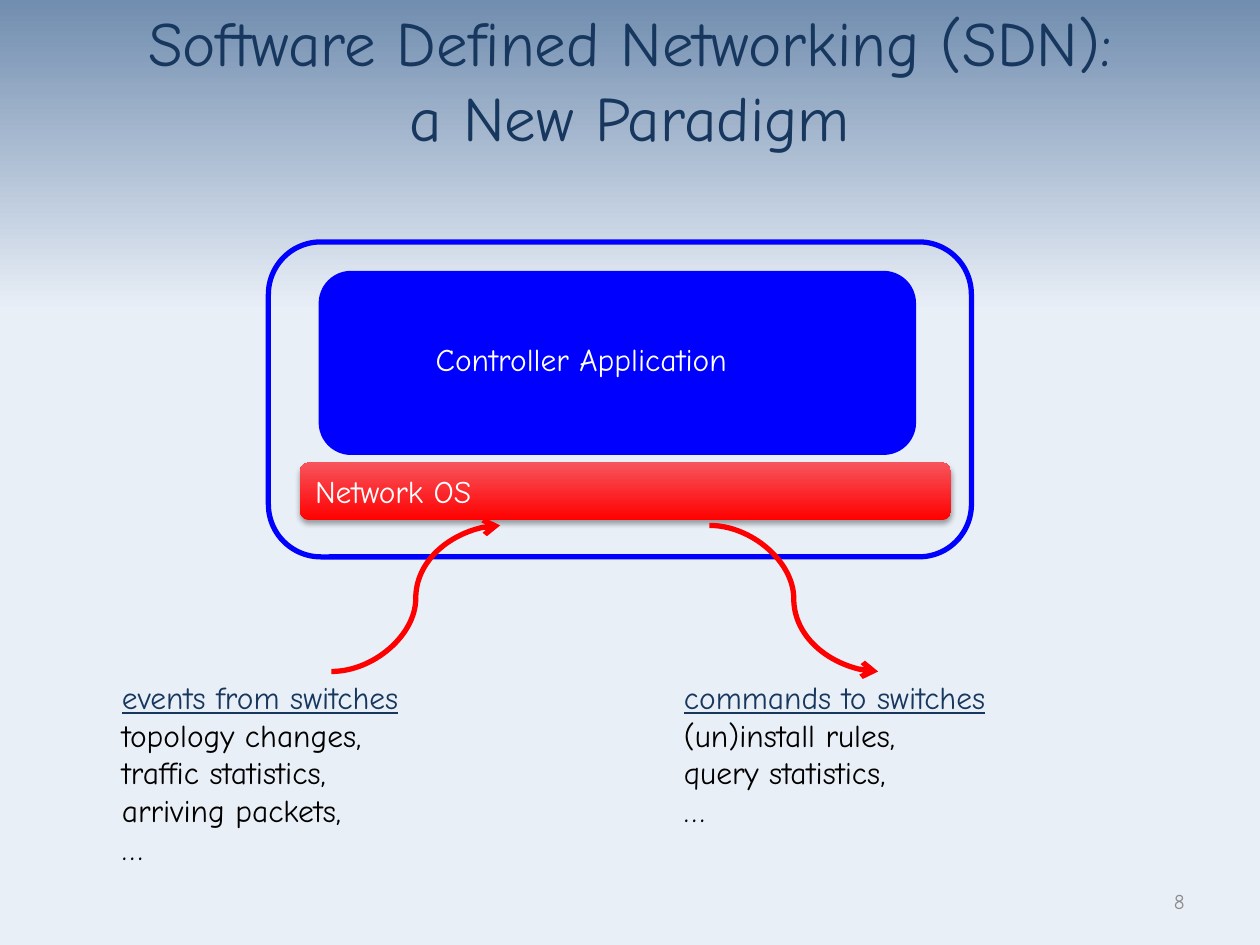
from lxml import etree
from pptx import Presentation
from pptx.dml.color import RGBColor
from pptx.enum.shapes import MSO_CONNECTOR as CONN, MSO_SHAPE as SHAPE
from pptx.enum.text import MSO_ANCHOR as ANCHOR, PP_ALIGN as ALIGN
from pptx.oxml import parse_xml
from pptx.oxml.ns import nsdecls, qn
from pptx.util import Inches, Pt

FONT = "Comic Neue"
NAVY = RGBColor(0x17, 0x37, 0x5E)
BLUE = RGBColor(0x00, 0x00, 0xFF)
RED = RGBColor(0xFF, 0x00, 0x00)
CORAL = RGBColor(0xF7, 0x54, 0x5C)
STEEL = RGBColor(0x71, 0x8D, 0xAF)
PALE = RGBColor(0xE9, 0xEF, 0xF7)
GRAY = RGBColor(0x8C, 0x8C, 0x8C)
WHITE = RGBColor(0xFF, 0xFF, 0xFF)
BLACK = RGBColor(0x00, 0x00, 0x00)

prs = Presentation()
prs.slide_width, prs.slide_height = Inches(10), Inches(7.5)
s = prs.slides.add_slide(prs.slide_layouts[6])


def set_gradient(fill, stops, angle):
    fill.gradient()
    fill.gradient_angle = angle
    for stop, (position, color) in zip(fill.gradient_stops, stops):
        stop.position = position
        stop.color.rgb = color


def add_text(tf, lines, size=18, color=BLACK, first_color=None, underline_first=False,
             align=ALIGN.LEFT, anchor=ANCHOR.TOP, wrap=True):
    tf.word_wrap = wrap
    tf.vertical_anchor = anchor
    for i, line in enumerate(lines):
        p = tf.paragraphs[0] if i == 0 else tf.add_paragraph()
        p.text = line
        p.alignment = align
        for r in p.runs:
            r.font.name = FONT
            r.font.size = Pt(size)
            r.font.color.rgb = first_color if first_color and i == 0 else color
            if underline_first and i == 0:
                r.font.underline = True


# Background
set_gradient(s.background.fill, [(0, STEEL), (0.33, PALE)], 270)

# Slide number
sp = s.shapes.add_textbox(Inches(7.17), Inches(6.95), Inches(2.33), Inches(0.4))
add_text(sp.text_frame, ["8"], size=12, color=GRAY, align=ALIGN.RIGHT, anchor=ANCHOR.MIDDLE)

# Network OS bar with soft shadow
sp = s.shapes.add_shape(SHAPE.ROUNDED_RECTANGLE, Inches(2.38), Inches(3.67),
                        Inches(5.17), Inches(0.46))
set_gradient(sp.fill, [(0, RED), (1, CORAL)], 90)
sp.line.fill.background()
sp._element.spPr.append(parse_xml(
    f'<a:effectLst {nsdecls("a")}><a:outerShdw blurRad="39370" dist="22860" dir="5400000" '
    'rotWithShape="0"><a:srgbClr val="000000"><a:alpha val="35000"/></a:srgbClr>'
    '</a:outerShdw></a:effectLst>'))
add_text(sp.text_frame, ["Network OS"], color=WHITE, anchor=ANCHOR.MIDDLE)

# Controller application box, its label, and the frame around the controller
for x, y, w, h, filled in [(2.55, 2.17, 4.7, 1.42, True), (2.13, 1.92, 5.58, 2.5, False)]:
    sp = s.shapes.add_shape(SHAPE.ROUNDED_RECTANGLE, Inches(x), Inches(y), Inches(w), Inches(h))
    sp.shadow.inherit = False
    sp.line.color.rgb = BLUE
    sp.line.width = Pt(3)
    if filled:
        sp.fill.solid()
        sp.fill.fore_color.rgb = BLUE
        label = s.shapes.add_textbox(Inches(3.36), Inches(2.65), Inches(2.77), Inches(0.4))
        add_text(label.text_frame, ["Controller Application"], color=WHITE, wrap=False)
    else:
        sp.fill.background()

# Curved arrows: events go up, commands go down
for x1, y1, x2, y2 in [(2.63, 5.33, 3.97, 4.17), (5.63, 4.17, 6.97, 5.33)]:
    arrow = s.shapes.add_connector(CONN.CURVE, Inches(x1), Inches(y1), Inches(x2), Inches(y2))
    arrow.line.color.rgb = RED
    arrow.line.width = Pt(3)
    etree.SubElement(arrow.line._get_or_add_ln(), qn("a:tailEnd"), type="arrow")
    etree.SubElement(arrow._element.spPr, qn("a:effectLst"))

# Message lists
for x, w, h, lines in [
    (0.87, 2.73, 1.62, ["events from switches", "topology changes,", "traffic statistics,",
                        "arriving packets,", "…"]),
    (5.33, 2.81, 1.31, ["commands to switches", "(un)install rules,", "query statistics,", "…"]),
]:
    sp = s.shapes.add_textbox(Inches(x), Inches(5.33), Inches(w), Inches(h))
    add_text(sp.text_frame, lines, first_color=NAVY, underline_first=True, wrap=False)

# Title
sp = s.shapes.add_textbox(Inches(0.25), Inches(0), Inches(9.5), Inches(1.25))
add_text(sp.text_frame, ["Software Defined Networking (SDN):\va New Paradigm"], size=36,
         color=NAVY, align=ALIGN.CENTER, anchor=ANCHOR.MIDDLE)

prs.save("out.pptx")
